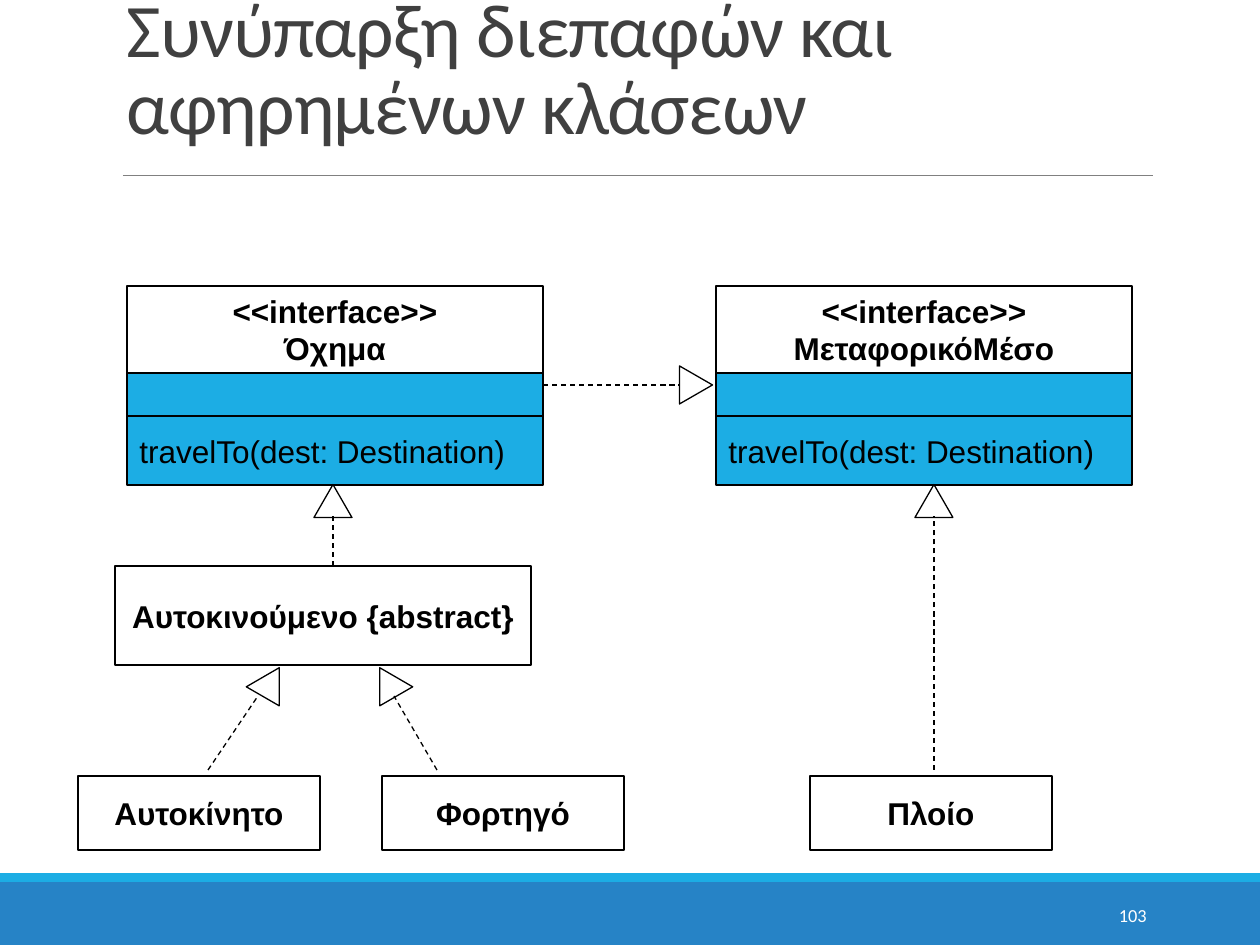
from dataclasses import dataclass

from lxml import etree
from pptx import Presentation
from pptx import util as u
from pptx.dml.color import RGBColor
from pptx.enum import dml, shapes, text
from pptx.oxml.ns import qn

EMU_PER_INCH = 914400
PX_PER_INCH = 126


@dataclass(frozen=True)
class Theme:
    ink: RGBColor = RGBColor(0, 0, 0)
    paper: RGBColor = RGBColor(255, 255, 255)
    title: RGBColor = RGBColor(0x40, 0x40, 0x40)
    rule: RGBColor = RGBColor(0x80, 0x80, 0x80)
    band: RGBColor = RGBColor(0x26, 0x83, 0xC6)
    accent: RGBColor = RGBColor(0x1C, 0xAD, 0xE4)
    heading_font: str = "Calibri"
    diagram_font: str = "Arial"
    title_size: float = 43.2
    diagram_size: float = 18
    number_size: float = 10.5
    outline: float = 0.75


@dataclass(frozen=True)
class Box:
    x: int
    y: int
    w: int
    h: int
    label: str = ""
    bold: bool = True
    align: text.PP_ALIGN = text.PP_ALIGN.CENTER
    fill: RGBColor = Theme.paper


@dataclass(frozen=True)
class Interface:
    x: int
    name: str


@dataclass(frozen=True)
class Realization:
    """Dashed line to a hollow arrowhead, given by the head's centre and turn."""
    start: tuple[int, int]
    end: tuple[int, int]
    head: tuple[int, int]
    turn: int


T = Theme()
INTERFACE_TOP, BOX_W = 286, 416
CLASS_TOP, CLASS_W, CLASS_H = 776, 242, 74
HEAD_W, HEAD_H = 38, 33

INTERFACES = [Interface(127, "Όχημα"), Interface(716, "ΜεταφορικόΜέσο")]
CLASSES = [
    Box(115, 566, BOX_W, 99, "Αυτοκινούμενο {abstract}"),
    Box(78, CLASS_TOP, CLASS_W, CLASS_H, "Αυτοκίνητο"),
    Box(382, CLASS_TOP, CLASS_W, CLASS_H, "Φορτηγό"),
    Box(810, CLASS_TOP, CLASS_W, CLASS_H, "Πλοίο"),
]
REALIZATIONS = [
    Realization((543, 385), (679, 385), (696, 385), 90),
    Realization((333, 566), (333, 516), (333, 501), 0),
    Realization((934, 770), (934, 516), (934, 501), 0),
    Realization((437, 770), (394, 696), (388, 682), 330),
    Realization((208, 770), (258, 696), (271, 682), 30),
]


def px(n: float) -> u.Emu:
    return u.Emu(round(n * EMU_PER_INCH / PX_PER_INCH))


def add_preset(s, kind, x: float, y: float, w: int, h: int):
    sp = s.shapes.add_shape(kind, px(x), px(y), px(w), px(h))
    sp.shadow.inherit = False
    return sp


def add_band(s, y: int, h: int, color: RGBColor) -> None:
    sp = add_preset(s, shapes.MSO_SHAPE.RECTANGLE, 0, y, 1260, h)
    sp.fill.solid()
    sp.fill.fore_color.rgb = color
    sp.line.fill.background()


def outline(line) -> None:
    line.color.rgb = T.ink
    line.width = u.Pt(T.outline)


def add_line(s, start: tuple[int, int], end: tuple[int, int]):
    c = s.shapes.add_connector(shapes.MSO_CONNECTOR.STRAIGHT,
                               *(px(n) for n in start + end))
    etree.SubElement(c._element.spPr, qn("a:effectLst"))
    return c


def style(p, font: str, size: float, color: RGBColor, bold: bool = False) -> None:
    p.font.name, p.font.size, p.font.bold = font, u.Pt(size), bold
    p.font.color.rgb = color


def add_box(s, box: Box) -> None:
    sp = add_preset(s, shapes.MSO_SHAPE.RECTANGLE, box.x, box.y, box.w, box.h)
    sp.fill.solid()
    sp.fill.fore_color.rgb = box.fill
    outline(sp.line)
    if not box.label:
        return
    tf = sp.text_frame
    tf.vertical_anchor = text.MSO_ANCHOR.MIDDLE
    tf.text = box.label
    for p in tf.paragraphs:
        p.alignment = box.align
        style(p, T.diagram_font, T.diagram_size, T.ink, box.bold)


def add_interface(s, item: Interface) -> None:
    """Stack the name, attribute and operation compartments."""
    compartments = [
        (87, f"<<interface>>\n{item.name}", True, text.PP_ALIGN.CENTER, T.paper),
        (43, "", False, text.PP_ALIGN.LEFT, T.accent),
        (69, "travelTo(dest: Destination)", False, text.PP_ALIGN.LEFT, T.accent),
    ]
    y = INTERFACE_TOP
    for h, label, bold, align, fill in compartments:
        add_box(s, Box(item.x, y, BOX_W, h, label, bold, align, fill))
        y += h


def add_realization(s, rel: Realization) -> None:
    cx, cy = rel.head
    head = add_preset(s, shapes.MSO_SHAPE.ISOSCELES_TRIANGLE,
                      cx - HEAD_W / 2, cy - HEAD_H / 2, HEAD_W, HEAD_H)
    head.rotation = rel.turn
    head.fill.background()
    outline(head.line)
    c = add_line(s, rel.start, rel.end)
    outline(c.line)
    c.line.dash_style = dml.MSO_LINE.DASH


def add_title(s) -> None:
    sp = s.shapes.title
    sp.left, sp.top, sp.width, sp.height = px(114), px(39), px(1040), px(117)
    tf = sp.text_frame
    tf.text = "Συνύπαρξη διεπαφών και αφηρημένων κλάσεων"
    tf.word_wrap = True
    tf.auto_size = text.MSO_AUTO_SIZE.NONE
    tf.vertical_anchor = text.MSO_ANCHOR.BOTTOM
    p = tf.paragraphs[0]
    p.alignment = text.PP_ALIGN.LEFT
    p.line_spacing = 0.85
    style(p, T.heading_font, T.title_size, T.title)
    p.runs[0].font._element.set("spc", "-50")


def add_slide_number(s) -> None:
    tf = s.shapes.add_textbox(px(1023), px(890), px(136), px(50)).text_frame
    tf.word_wrap = True
    tf.vertical_anchor = text.MSO_ANCHOR.MIDDLE
    tf.text = "103"
    p = tf.paragraphs[0]
    p.alignment = text.PP_ALIGN.RIGHT
    style(p, T.heading_font, T.number_size, T.paper)


def main() -> None:
    prs = Presentation()
    prs.slide_width, prs.slide_height = px(1260), px(945)
    s = prs.slides.add_slide(prs.slide_layouts[5])
    add_band(s, 882, 63, T.band)
    add_band(s, 873, 9, T.accent)
    rule = add_line(s, (123, 175), (1153, 175))
    rule.line.color.rgb = T.rule
    rule.line.width = u.Pt(0.5)
    add_title(s)
    add_slide_number(s)
    for item in INTERFACES:
        add_interface(s, item)
    for box in CLASSES:
        add_box(s, box)
    for rel in REALIZATIONS:
        add_realization(s, rel)
    prs.save("out.pptx")


if __name__ == "__main__":
    main()
